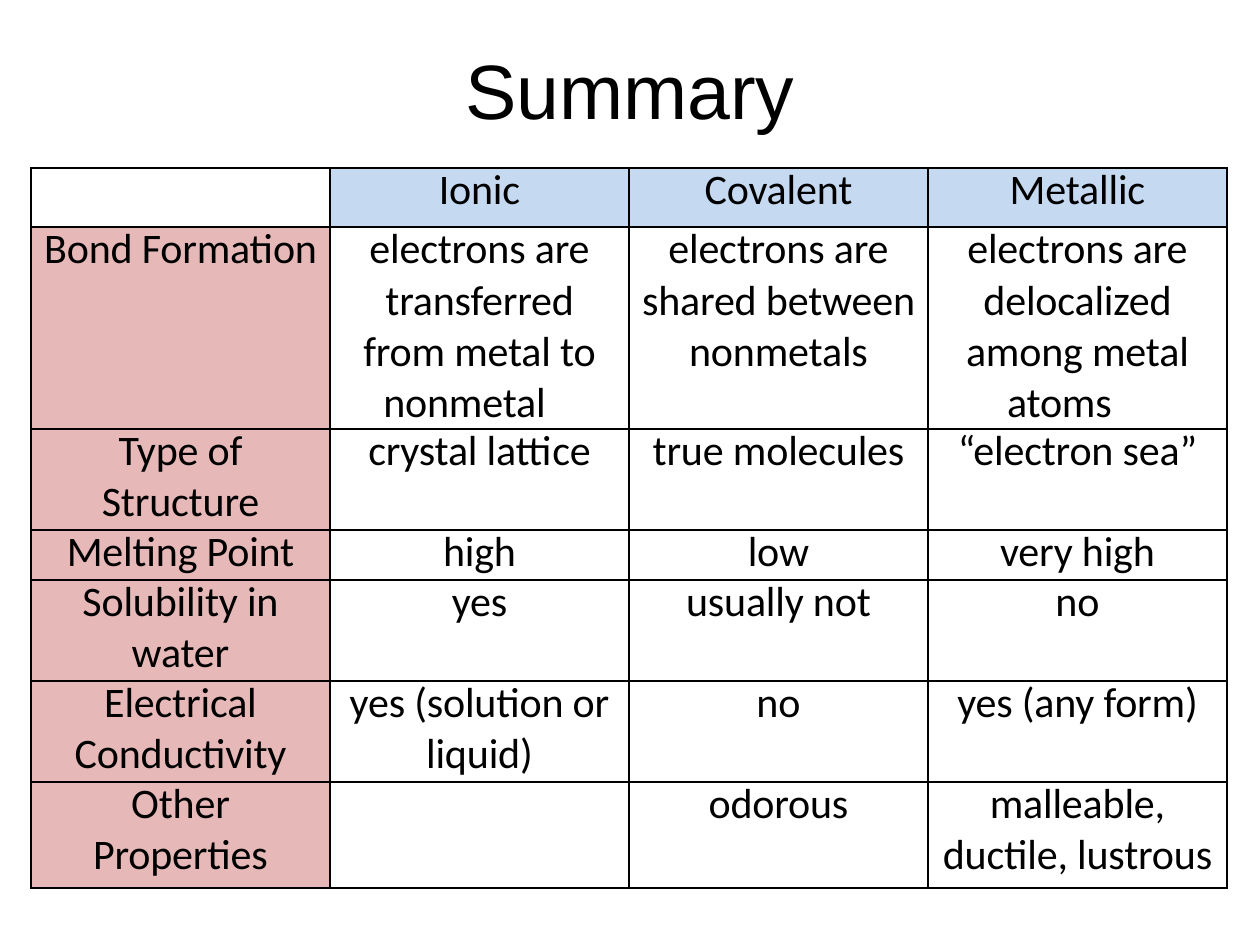
"""Build a slide that summarises ionic, covalent and metallic bonding in a table."""
from pptx import Presentation
from pptx.dml.color import RGBColor
from pptx.enum.text import MSO_ANCHOR, PP_ALIGN
from pptx.oxml import parse_xml
from pptx.oxml.ns import nsdecls
from pptx.util import Pt

PX = 914400 / 126
BLACK = RGBColor(0x00, 0x00, 0x00)
BLUE = RGBColor(0xC5, 0xD9, 0xF0)
PINK = RGBColor(0xE6, 0xB8, 0xB8)

COLUMN_WIDTH = 299
ROW_HEIGHTS = [59, 202, 101, 50, 101, 101, 106]
ROWS = [
    ["", "Ionic", "Covalent", "Metallic"],
    ["Bond Formation",
     "electrons are\ntransferred from metal to\nnonmetal",
     "electrons are\nshared between nonmetals",
     "electrons are\ndelocalized among metal\natoms"],
    ["Type of\nStructure", "crystal lattice", "true molecules", "“electron sea”"],
    ["Melting Point", "high", "low", "very high"],
    ["Solubility in\nwater", "yes", "usually not", "no"],
    ["Electrical\nConductivity", "yes (solution or\nliquid)", "no", "yes (any form)"],
    ["Other\nProperties", "", "odorous", "malleable,\nductile, lustrous"],
]
INDENTS = {
    "transferred from metal to": (31, 31),
    "nonmetal": (0, 30),
    "delocalized among metal": (36, 36),
    "atoms": (0, 36),
}


def px(length):
    return round(length * PX)


def add_run(paragraph, text, font_name, size):
    paragraph.alignment = PP_ALIGN.CENTER
    run = paragraph.add_run()
    run.text = text
    run.font.name = font_name
    run.font.size = Pt(size)
    run.font.color.rgb = BLACK
    return run


presentation = Presentation()
presentation.slide_width = px(1260)
presentation.slide_height = px(945)
slide = presentation.slides.add_slide(presentation.slide_layouts[6])

title = slide.shapes.add_textbox(px(63), px(10), px(1134), px(158))
title.text_frame.word_wrap = True
title.text_frame.vertical_anchor = MSO_ANCHOR.MIDDLE
add_run(title.text_frame.paragraphs[0], "Summary", "Arial", 44)

table = slide.shapes.add_table(
    len(ROWS), len(ROWS[0]), px(31), px(168),
    px(COLUMN_WIDTH * len(ROWS[0])), px(sum(ROW_HEIGHTS))).table
table.first_row = False
table.horz_banding = False
for column in table.columns:
    column.width = px(COLUMN_WIDTH)

for row_index, (height, texts) in enumerate(zip(ROW_HEIGHTS, ROWS)):
    table.rows[row_index].height = px(height)
    for column_index, text in enumerate(texts):
        cell = table.cell(row_index, column_index)
        cell.margin_left = cell.margin_right = 0
        cell.margin_top = cell.margin_bottom = 0
        if text and (row_index == 0 or column_index == 0):
            cell.fill.solid()
            cell.fill.fore_color.rgb = BLUE if row_index == 0 else PINK
        else:
            cell.fill.background()

        properties = cell._tc.get_or_add_tcPr()
        for position, side in enumerate(["lnL", "lnR", "lnT", "lnB"]):
            properties.insert(position, parse_xml(
                f'<a:{side} {nsdecls("a")} w="{Pt(1)}"><a:solidFill>'
                f'<a:srgbClr val="{BLACK}"/></a:solidFill></a:{side}>'))

        for line_index, line in enumerate(text.split("\n") if text else []):
            frame = cell.text_frame
            paragraph = frame.add_paragraph() if line_index else frame.paragraphs[0]
            run = add_run(paragraph, line, "Calibri", 24)
            run.font._element.set("spc", "-10")
            if line_index == 0:
                paragraph.line_spacing = Pt(27.5)
            if line in INDENTS:
                left, right = INDENTS[line]
                paragraph_properties = paragraph._p.get_or_add_pPr()
                paragraph_properties.set("marL", str(px(left)))
                paragraph_properties.set("marR", str(px(right)))

presentation.save("out.pptx")
